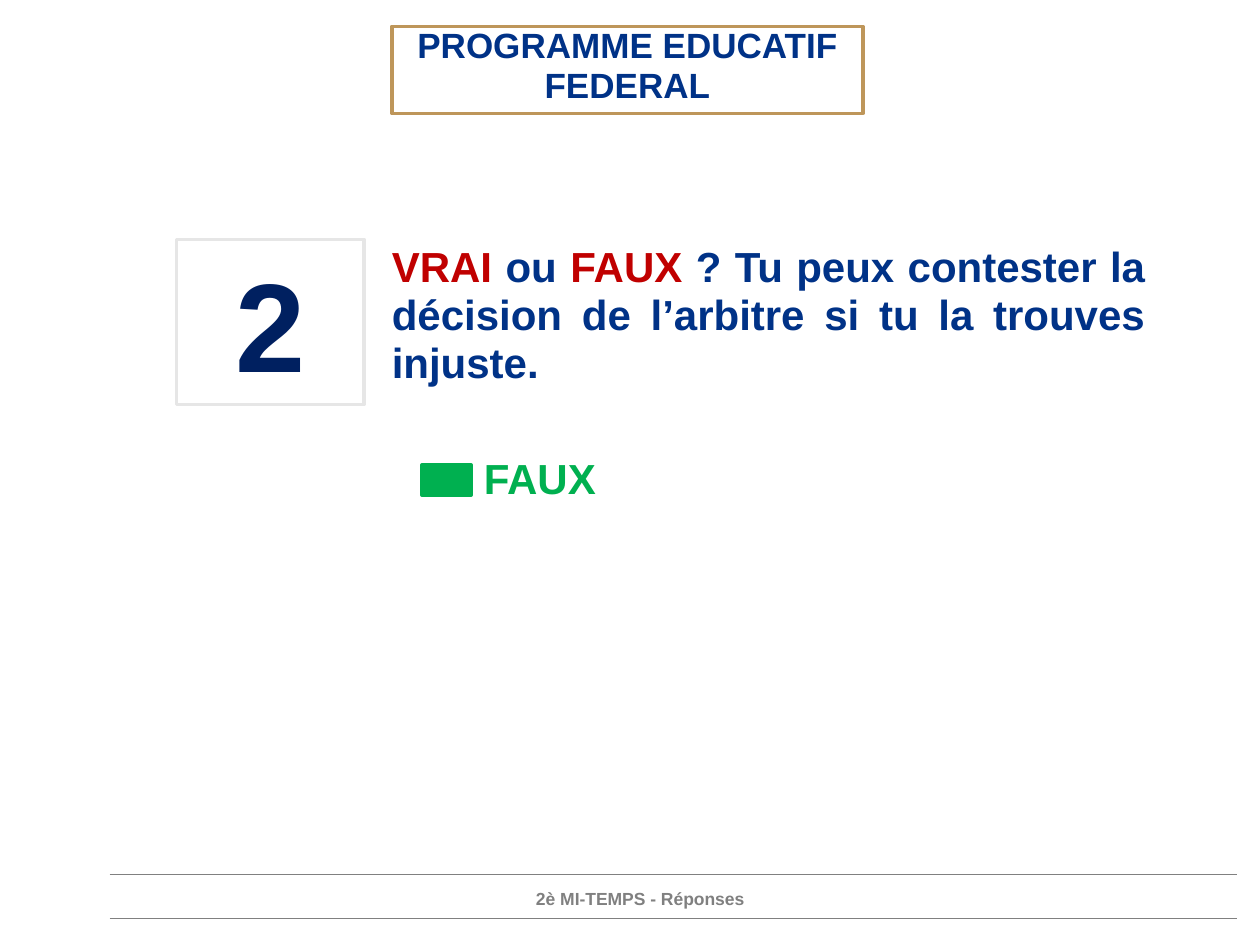
"""Build a quiz answer slide with a title, a question, its answer and a footer."""
from dataclasses import dataclass
from typing import Optional

from lxml import etree
from pptx import Presentation, util as u
from pptx.dml.color import RGBColor
from pptx.enum import shapes, text
from pptx.oxml.ns import qn


@dataclass(frozen=True)
class Theme:
    font: str = "Arial"
    white: str = "FFFFFF"
    blue: str = "003287"
    navy: str = "002060"
    red: str = "C00000"
    green: str = "00B050"
    gold: str = "BE965A"
    pale: str = "E6E6E6"
    gray: str = "808080"
    title: int = 20
    body: int = 24
    digit: int = 72
    foot: int = 10
    edge: float = 2
    rule: float = 0.75


@dataclass(frozen=True)
class Box:
    left: float
    top: float
    width: float
    height: float
    runs: tuple[tuple[str, str], ...] = ()
    size: int = 0
    align: text.PP_ALIGN = text.PP_ALIGN.CENTER
    fill: Optional[str] = None
    edge: Optional[str] = None
    pad: tuple[float, float] = (0, 0)
    space: float = 0.95
    anchor: text.MSO_ANCHOR = text.MSO_ANCHOR.TOP


T = Theme()
BOXES = (
    Box(3.11, 0.21, 3.74, 0.69, (("PROGRAMME EDUCATIF FEDERAL", T.blue),),
        T.title, fill=T.white, edge=T.gold),
    Box(3.11, 1.94, 5.98, 1.28,
        (("VRAI", T.red), (" ou ", T.blue), ("FAUX ", T.red),
         ("? Tu peux contester la décision de l’arbitre si tu la trouves injuste.", T.blue)),
        T.body, text.PP_ALIGN.JUSTIFY),
    Box(1.4, 1.9, 1.49, 1.31, (("2", T.navy),), T.digit, fill=T.white, edge=T.pale,
        pad=(0.1, 0.05), space=1, anchor=text.MSO_ANCHOR.MIDDLE),
    Box(3.84, 3.62, 3.66, 1.28, (("FAUX", T.green),), T.body, text.PP_ALIGN.LEFT,
        T.white, T.white),
    Box(3.35, 3.69, 0.39, 0.24, fill=T.green, edge=T.green),
    Box(2.64, 7.06, 4.88, 0.2, (("2è MI-TEMPS - Réponses", T.gray),), T.foot),
)
RULES = (6.94, 7.29)


def color(code: str) -> RGBColor:
    """Turn a hex code into a colour."""
    return RGBColor.from_string(code)


def write(frame, box: Box) -> None:
    """Fill a text frame with the runs of a box."""
    frame.word_wrap = True
    frame.vertical_anchor = box.anchor
    frame.margin_left = frame.margin_right = u.Inches(box.pad[0])
    frame.margin_top = frame.margin_bottom = u.Inches(box.pad[1])
    para = frame.paragraphs[0]
    para.alignment = box.align
    para.line_spacing = box.space
    para.font.name = T.font
    para.font.size = u.Pt(box.size)
    para.font.bold = True
    for words, hue in box.runs:
        run = para.add_run()
        run.text = words
        run.font.color.rgb = color(hue)


def draw(slide, box: Box) -> None:
    """Draw a filled box or a plain text box."""
    place = [u.Inches(n) for n in (box.left, box.top, box.width, box.height)]
    if box.fill:
        item = slide.shapes.add_shape(shapes.MSO_SHAPE.RECTANGLE, *place)
        item.shadow.inherit = False
        item.fill.solid()
        item.fill.fore_color.rgb = color(box.fill)
        item.line.color.rgb = color(box.edge)
        item.line.width = u.Pt(T.edge)
    else:
        item = slide.shapes.add_textbox(*place)
    if box.runs:
        write(item.text_frame, box)


def rule(slide, top: float) -> None:
    """Draw one footer rule."""
    line = slide.shapes.add_connector(
        shapes.MSO_CONNECTOR.STRAIGHT,
        u.Inches(0.87), u.Inches(top), u.Inches(9.82), u.Inches(top))
    line.line.color.rgb = color(T.gray)
    line.line.width = u.Pt(T.rule)
    etree.SubElement(line._element.spPr, qn("a:effectLst"))


def main() -> None:
    """Build and save the slide."""
    deck = Presentation()
    deck.slide_width, deck.slide_height = u.Inches(10), u.Inches(7.5)
    slide = deck.slides.add_slide(deck.slide_layouts[6])
    for top in RULES:
        rule(slide, top)
    for box in BOXES:
        draw(slide, box)
    deck.save("out.pptx")


if __name__ == "__main__":
    main()
